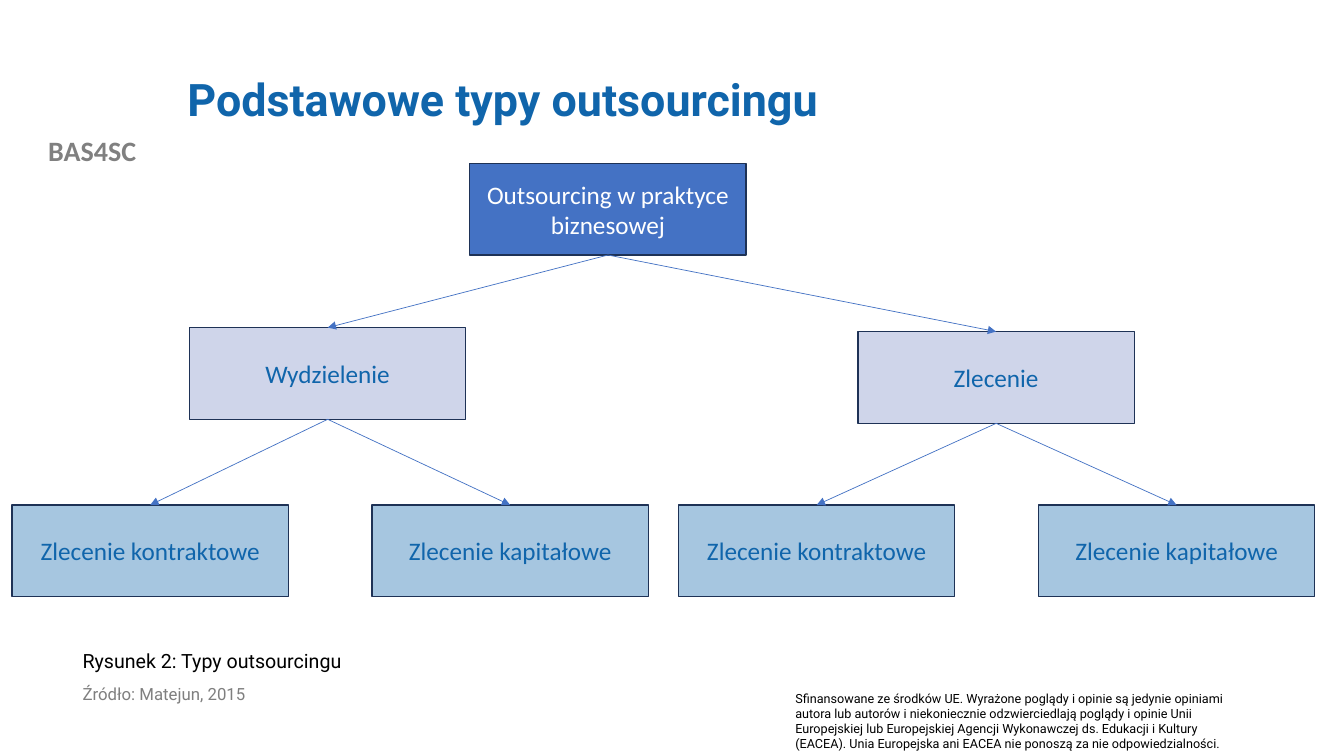
"""Builds a slide with a tree of the basic types of outsourcing."""
from lxml.etree import SubElement
from pptx import Presentation
from pptx.dml.color import RGBColor
from pptx.enum.shapes import MSO_CONNECTOR, MSO_SHAPE
from pptx.enum.text import MSO_ANCHOR, PP_ALIGN
from pptx.oxml.ns import qn
from pptx.util import Inches, Pt

BOX_WIDTH, BOX_HEIGHT = 2.74, 0.91
BLUE = "1065AB"
LEVELS = [
    {"fill": "4472C4", "color": "FFFFFF"},
    {"fill": "CFD5EA", "color": BLUE},
    {"fill": "A6C6E0", "color": BLUE},
]
NODES = {
    "root": ("Outsourcing w praktyce biznesowej", 0, 4.66, 1.62, None),
    "separation": ("Wydzielenie", 1, 1.88, 3.25, "root"),
    "commission": ("Zlecenie", 1, 8.51, 3.29, "root"),
    "separation contract": ("Zlecenie kontraktowe", 2, 0.12, 5.01, "separation"),
    "separation capital": ("Zlecenie kapitałowe", 2, 3.69, 5.01, "separation"),
    "commission contract": ("Zlecenie kontraktowe", 2, 6.73, 5.01, "commission"),
    "commission capital": ("Zlecenie kapitałowe", 2, 10.3, 5.01, "commission"),
}
DISCLAIMER = (
    "Sfinansowane ze środków UE. Wyrażone poglądy i opinie są jedynie opiniami "
    "autora lub autorów i niekoniecznie odzwierciedlają poglądy i opinie Unii "
    "Europejskiej lub Europejskiej Agencji Wykonawczej ds. Edukacji i Kultury "
    "(EACEA). Unia Europejska ani EACEA nie ponoszą za nie odpowiedzialności."
)
LEFT, CENTER = PP_ALIGN.LEFT, PP_ALIGN.CENTER
TOP, MIDDLE = MSO_ANCHOR.TOP, MSO_ANCHOR.MIDDLE
TEXTS = [
    ("BAS4SC", (0, 1.28, 1.83, 0.44), TOP, {"alignment": CENTER},
     {"name": "Calibri", "size": Pt(20), "bold": True}, "808080"),
    (DISCLAIMER, (7.79, 6.8, 4.63, 0.71), TOP, {"alignment": LEFT},
     {"name": "Roboto", "size": Pt(9)}, "000000"),
    ("Źródło: Matejun, 2015", (0.72, 6.76, 5.01, 0.52), TOP,
     {"alignment": LEFT, "line_spacing": 0.9},
     {"name": "Roboto", "size": Pt(12)}, "7F7F7F"),
    ("Rysunek 2: Typy outsourcingu", (0.72, 6.39, 4.39, 0.34), TOP,
     {"alignment": LEFT}, {"name": "Roboto", "size": Pt(14)}, "000000"),
    ("Podstawowe typy outsourcingu", (1.76, 0.4, 10.66, 1.22), MIDDLE,
     {"alignment": LEFT, "line_spacing": 0.9},
     {"name": "Roboto", "size": Pt(32), "bold": True}, BLUE),
]


def paint(target, color):
    target.rgb = RGBColor.from_string(color)


def set_all(target, values):
    for name, value in values.items():
        setattr(target, name, value)


def write(box, text, anchor, layout, font, color):
    frame = box.text_frame
    set_all(frame, {"word_wrap": True, "vertical_anchor": anchor})
    para = frame.paragraphs[0]
    set_all(para, layout)
    span = para.add_run()
    span.text = text
    set_all(span.font, font)
    paint(span.font.color, color)


def add_text(page, text, place, *style):
    box = page.shapes.add_textbox(*map(Inches, place))
    write(box, text, *style)


def add_node(page, text, level, left, top):
    place = map(Inches, (left, top, BOX_WIDTH, BOX_HEIGHT))
    box = page.shapes.add_shape(MSO_SHAPE.RECTANGLE, *place)
    box.shadow.inherit = False
    box.fill.solid()
    paint(box.fill.fore_color, LEVELS[level]["fill"])
    paint(box.line.color, "1E3256")
    box.line.width = Pt(1)
    write(box, text, MIDDLE, {"alignment": CENTER},
          {"name": "Calibri", "size": Pt(18)}, LEVELS[level]["color"])
    return box


def add_arrow(page, parent, child):
    arrow = page.shapes.add_connector(MSO_CONNECTOR.STRAIGHT, 0, 0, 0, 0)
    arrow.begin_connect(parent, 2)
    arrow.end_connect(child, 0)
    paint(arrow.line.color, "4472C4")
    arrow.line.width = Pt(0.5)
    SubElement(arrow.line._get_or_add_ln(), qn("a:tailEnd"), type="triangle")
    SubElement(arrow._element.spPr, qn("a:effectLst"))


def main():
    deck = Presentation()
    set_all(deck, {"slide_width": Inches(13.33), "slide_height": Inches(7.5)})
    page = deck.slides.add_slide(deck.slide_layouts[6])
    for item in TEXTS:
        add_text(page, *item)
    boxes = {}
    for key, (*node, parent) in NODES.items():
        boxes[key] = add_node(page, *node)
        if parent:
            add_arrow(page, boxes[parent], boxes[key])
    deck.save("out.pptx")


if __name__ == "__main__":
    main()
